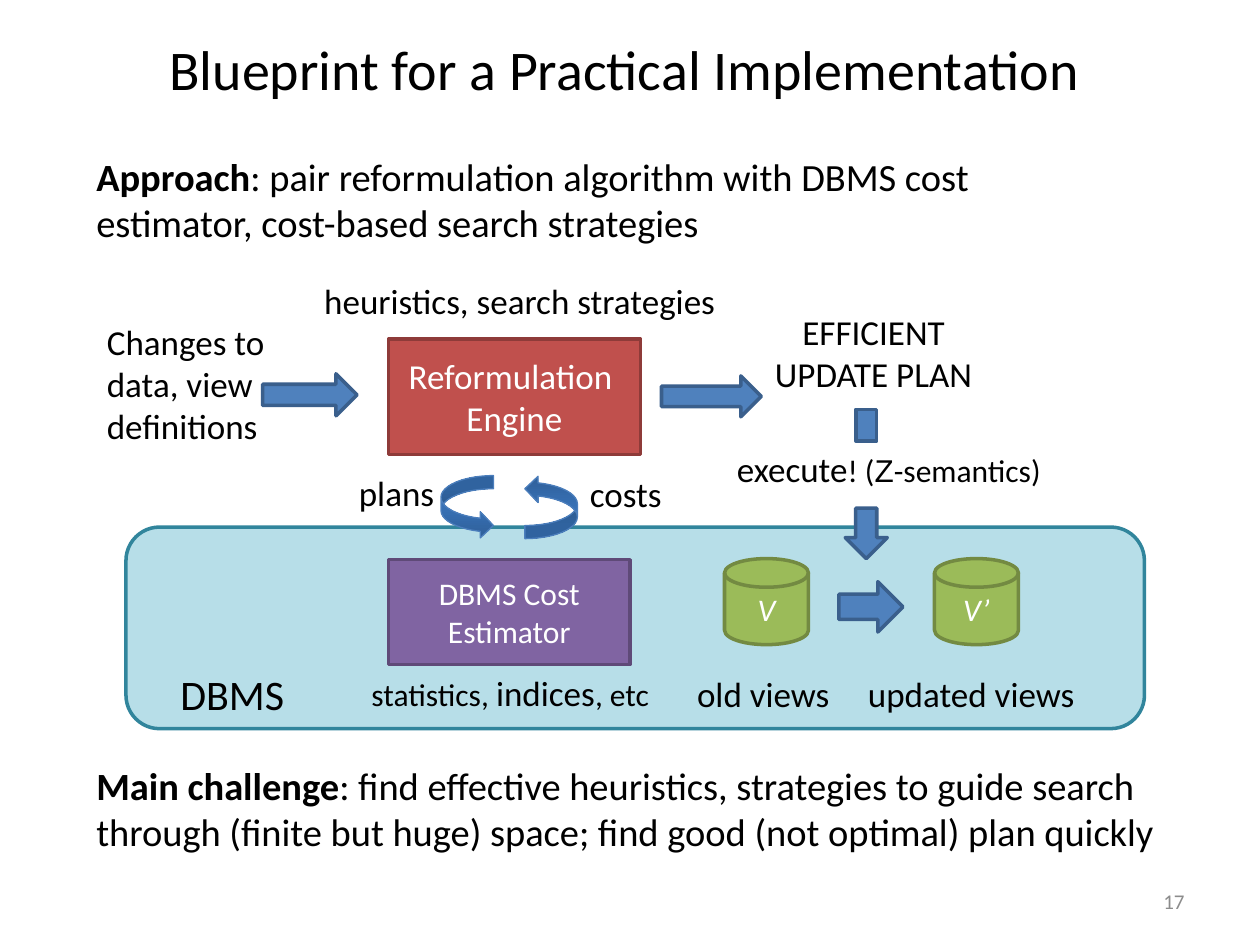
from copy import deepcopy
from pptx import Presentation
from pptx.dml.color import RGBColor as Rgb
from pptx.enum.shapes import MSO_SHAPE as Kind
from pptx.enum.text import MSO_ANCHOR as Anchor, PP_ALIGN as Align
from pptx.oxml.ns import qn
from pptx.util import Inches, Pt

deck = Presentation()
deck.slide_width, deck.slide_height = Inches(10), Inches(7.5)
slide = deck.slides.add_slide(deck.slide_layouts[6])
col = deck.slide_width / 120
row = deck.slide_height / 90


def ink(code):
    return Rgb.from_string(code)


def put(text, x, y, w, h, kind=None, fill=None, edge=None, width=2, size=20,
        color="000000", align=Align.LEFT, anchor=Anchor.TOP, after=0, **style):
    box = [int(v) for v in (x * col, y * row, w * col, h * row)]
    if kind is None:
        shape = slide.shapes.add_textbox(*box)
    else:
        shape = slide.shapes.add_shape(kind, *box)
        shape.shadow.inherit = False
        shape.line.color.rgb = ink(edge)
        shape.line.width = Pt(width)
        if fill:
            shape.fill.solid()
            shape.fill.fore_color.rgb = ink(fill)
    frame = shape.text_frame
    frame.word_wrap = True
    frame.vertical_anchor = anchor
    for i, line in enumerate(text):
        para = frame.paragraphs[0] if i == 0 else frame.add_paragraph()
        para.alignment = align
        para.space_after = Pt(after)
        for words, own in [(line, {})] if isinstance(line, str) else line:
            look = {"name": "Calibri", "size": size, **style, **own}
            run = para.add_run()
            run.text = words
            run.font.color.rgb = ink(color)
            for key, val in look.items():
                setattr(run.font, key, Pt(val) if key == "size" else val)
    return shape


mid = {"align": Align.CENTER}
core = {**mid, "anchor": Anchor.MIDDLE}
bold = {"bold": True}
blue = {"fill": "4F81BD", "edge": "3A5F8C"}

put(["Blueprint for a Practical Implementation"], 2, -1, 115, 15, size=32, **core)
put(["17"], 86, 83.4, 28, 4.8, size=12, color="8C8C8C",
    align=Align.RIGHT, anchor=Anchor.MIDDLE)
put([[("Approach", bold), (": pair reformulation algorithm with DBMS cost "
     "estimator, cost-based search strategies", {})]], 8, 14, 101, 10, size=22)
put([[("Main challenge", bold), (": find effective heuristics, strategies to guide "
     "search through (finite but huge) space; find good (not optimal) plan quickly",
     {})]], 8, 72, 108, 10, size=22, after=6)

put([], 12, 50.2, 97, 19.2, Kind.ROUNDED_RECTANGLE, "B7DEE8", "31859C")
put(["DBMS"], 16, 63.1, 24, 6, size=24)
put(["Reformulation ", "Engine"], 37, 32.3, 24, 11, Kind.RECTANGLE,
    "C0504D", "8E3B39", color="FFFFFF", **core)
put(["DBMS Cost Estimator"], 37, 53.3, 23, 10, Kind.RECTANGLE,
    "8064A2", "5F4A78", size=18, color="FFFFFF", **core)

for x, flip in (42, False), (50, True):
    loop = put([], x, 45.3, 5, 6, Kind.CURVED_RIGHT_ARROW, edge="4B7EBC", width=0.75)
    loop.fill.gradient()
    loop.fill.gradient_angle = 90
    stops = loop.element.spPr.find(qn("a:gradFill")).find(qn("a:gsLst"))
    stops.insert(1, deepcopy(stops[0]))
    tones = (0, "2F5F99"), (0.8, "3D7CC7"), (1, "3A7CCB")
    for stop, (spot, tone) in zip(loop.fill.gradient_stops, tones):
        stop.position = spot
        stop.color.rgb = ink(tone)
    if flip:
        form = loop.element.spPr.find(qn("a:xfrm"))
        form.set("flipH", "1")
        form.set("flipV", "1")

for x, y, w, h, kind in [
    (25, 35.6, 9, 4, Kind.RIGHT_ARROW),
    (63, 35.8, 9.5, 3.9, Kind.RIGHT_ARROW),
    (79.9, 55.4, 6.1, 4.8, Kind.RIGHT_ARROW),
    (80.5, 48.4, 4, 4.8, Kind.DOWN_ARROW),
    (81.5, 39, 2, 3, Kind.RECTANGLE),
]:
    put([], x, y, w, h, kind, **blue)

for name, x in ("V", 69), ("V’", 89):
    put([name], x, 53.2, 8, 8.2, Kind.FLOWCHART_MAGNETIC_DISK, "9BBB59", "738A42",
        size=18, color="FFFFFF", italic=True, **core)

for words, x, y, w in [
    ("heuristics, search strategies", 28, 26, 43),
    ("EFFICIENT UPDATE PLAN", 72, 29, 22.4),
    ("old views", 60, 63.5, 25.4),
    ("updated views", 81, 63.5, 23),
]:
    put([words], x, y, w, 5.3, **mid)

put(["plans"], 33, 44.3, 12, 5.3)
put(["costs"], 55, 44.4, 12, 5.3)
put(["Changes to", "data, view definitions"], 9, 29.9, 18, 13.3)
small = {"size": 18}
put([[("execute", {}), ("! (", small), ("Z", {**small, "name": "Arial"}),
      ("-semantics)", small)]], 69, 42, 38, 5.3)
put([[("statistics, ", small), ("indices", {}), (", etc", small)]],
    34.2, 63.4, 29, 5.3)

deck.save("out.pptx")
